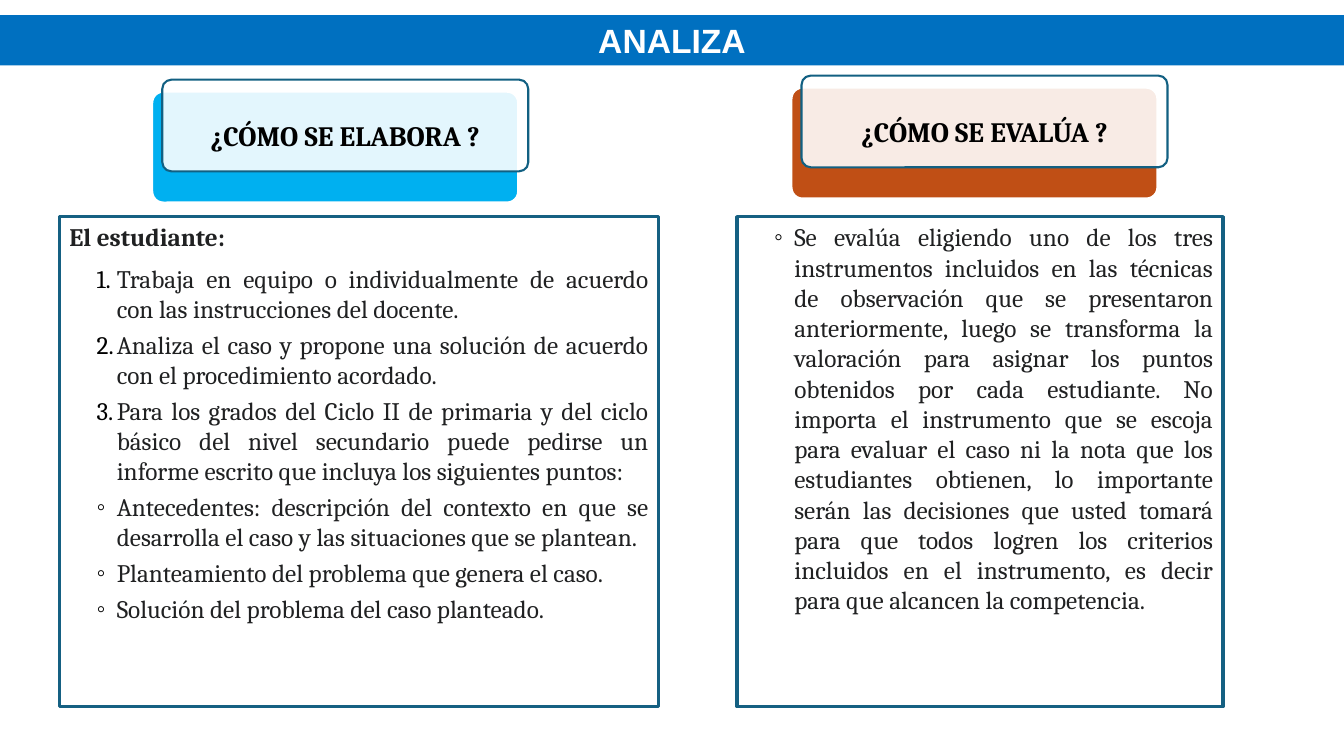
"""Builds the ANALIZA slide: how a case study is prepared and how it is assessed."""
from pptx import Presentation
from pptx.dml.color import RGBColor
from pptx.enum.shapes import MSO_SHAPE
from pptx.enum.text import MSO_ANCHOR, PP_ALIGN
from pptx.oxml.ns import qn
from pptx.util import Inches, Pt
from lxml import etree

RECT, ROUNDED = MSO_SHAPE.RECTANGLE, MSO_SHAPE.ROUNDED_RECTANGLE
LEFT, CENTER, JUSTIFY = PP_ALIGN.LEFT, PP_ALIGN.CENTER, PP_ALIGN.JUSTIFY
TOP, MIDDLE = MSO_ANCHOR.TOP, MSO_ANCHOR.MIDDLE

TITLE = "ANALIZA"
SECTIONS = [
    {
        "heading": "¿CÓMO SE ELABORA ?",
        "card": (1.51, 0.91),
        "card_color": "00B0F0",
        "panel": (0.59, 2.15, 5.94, 4.86),
        "border": 2,
        "body": [
            ("intro", "El estudiante:"),
            ("number", "Trabaja en equipo o individualmente de acuerdo con las "
                       "instrucciones del docente."),
            ("number", "Analiza el caso y propone una solución de acuerdo con el "
                       "procedimiento acordado."),
            ("number", "Para los grados del Ciclo II de primaria y del ciclo básico del "
                       "nivel secundario puede pedirse un informe escrito que incluya "
                       "los siguientes puntos:"),
            ("bullet", "Antecedentes: descripción del contexto en que se desarrolla el "
                       "caso y las situaciones que se plantean."),
            ("bullet", "Planteamiento del problema que genera el caso."),
            ("bullet", "Solución del problema del caso planteado."),
        ],
    },
    {
        "heading": "¿CÓMO SE EVALÚA ?",
        "card": (7.85, 0.87),
        "card_color": "C04F15",
        "panel": (7.31, 2.15, 4.82, 4.86),
        "border": 2.25,
        "body": [
            ("bullet", "Se evalúa eligiendo uno de los tres instrumentos incluidos en "
                       "las técnicas de observación que se presentaron anteriormente, "
                       "luego se transforma la valoración para asignar los puntos "
                       "obtenidos por cada estudiante. No importa el instrumento que se "
                       "escoja para evaluar el caso ni la nota que los estudiantes "
                       "obtienen, lo importante serán las decisiones que usted tomará "
                       "para que todos logren los criterios incluidos en el "
                       "instrumento, es decir para que alcancen la competencia."),
        ],
    },
]

THEME = {
    "banner": "0070C0", "white": "FFFFFF", "black": "000000", "ink": "202122",
    "panel_line": "156082", "card_line": "126082",
    "title_font": "Arial", "text_font": "Cambria",
    "title_size": 24, "heading_size": 20, "body_size": 18,
}
CARD_WIDTH, BASE_HEIGHT, FACE_HEIGHT = 3.63, 1.1, 0.91
FACE_SHIFT = (0.1, -0.12)
LABEL_SHIFT, LABEL_WIDTH = 0.22, 3.39


def add_box(shapes, kind, box, fill=None, line=None, width=1.5, opacity=None):
    shape = shapes.add_shape(kind, *map(Inches, box))
    shape.shadow.inherit = False
    if kind == ROUNDED:
        shape.adjustments[0] = 0.1
    if fill:
        shape.fill.solid()
        shape.fill.fore_color.rgb = RGBColor.from_string(fill)
    else:
        shape.fill.background()
    if opacity:
        color = shape._element.spPr.find(qn("a:solidFill"))[0]
        etree.SubElement(color, qn("a:alpha"), val=str(opacity * 1000))
    if line:
        shape.line.color.rgb = RGBColor.from_string(line)
        shape.line.width = Pt(width)
    else:
        shape.line.fill.background()
    return shape


def prepare_frame(shape, anchor=TOP, inset=(0.1, 0.05)):
    frame = shape.text_frame
    frame.word_wrap = True
    frame.vertical_anchor = anchor
    frame.margin_left = frame.margin_right = Inches(inset[0])
    frame.margin_top = frame.margin_bottom = Inches(inset[1])
    return frame


def write(paragraph, text, font=THEME["text_font"], size=THEME["body_size"],
          color=THEME["ink"], bold=False, align=LEFT, before=0, after=0, spacing=None):
    paragraph.alignment = align
    paragraph.space_before, paragraph.space_after = Pt(before), Pt(after)
    if spacing:
        paragraph.line_spacing = spacing
    run = paragraph.add_run()
    run.text = text
    run.font.name, run.font.size, run.font.bold = font, Pt(size), bold
    run.font.color.rgb = RGBColor.from_string(color)


def add_marker(paragraph, role):
    if role == "bullet":
        paragraph.level = 1
    properties = paragraph._p.get_or_add_pPr()
    properties.set("marL", str(Inches(0.47)))
    properties.set("indent", str(Inches(-0.2)))
    marker_color = etree.SubElement(properties, qn("a:buClr"))
    etree.SubElement(marker_color, qn("a:srgbClr"), val=THEME["black"])
    etree.SubElement(properties, qn("a:buFont"), typeface=THEME["title_font"])
    if role == "number":
        etree.SubElement(properties, qn("a:buAutoNum"), type="arabicPeriod")
    else:
        etree.SubElement(properties, qn("a:buChar"), char="◦")


def add_panel(slide, section):
    panel = add_box(slide.shapes, RECT, section["panel"],
                    line=THEME["panel_line"], width=section["border"])
    frame = prepare_frame(panel)
    for index, (role, text) in enumerate(section["body"]):
        paragraph = frame.add_paragraph() if index else frame.paragraphs[0]
        if role == "intro":
            write(paragraph, text, bold=True, before=5, after=5)
        else:
            write(paragraph, text, align=JUSTIFY, before=3, after=1)
            add_marker(paragraph, role)


def add_card(slide, section):
    x, y = section["card"]
    shapes = slide.shapes.add_group_shape().shapes
    add_box(shapes, ROUNDED, (x, y, CARD_WIDTH, BASE_HEIGHT),
            fill=section["card_color"], line=THEME["white"])
    add_box(shapes, ROUNDED, (x + FACE_SHIFT[0], y + FACE_SHIFT[1], CARD_WIDTH, FACE_HEIGHT),
            fill=THEME["white"], line=THEME["card_line"], opacity=89)
    label_box = (x + LABEL_SHIFT, y, LABEL_WIDTH, FACE_HEIGHT)
    label = shapes.add_textbox(*map(Inches, label_box))
    frame = prepare_frame(label, MIDDLE, (0.11, 0.11))
    write(frame.paragraphs[0], section["heading"], size=THEME["heading_size"],
          color=THEME["black"], bold=True, align=CENTER, spacing=0.9)


def main():
    deck = Presentation()
    deck.slide_width, deck.slide_height = Inches(13.33), Inches(7.5)
    slide = deck.slides.add_slide(deck.slide_layouts[6])
    banner = add_box(slide.shapes, RECT, (0, 0.15, 13.33, 0.5), fill=THEME["banner"])
    write(prepare_frame(banner).paragraphs[0], TITLE, font=THEME["title_font"],
          size=THEME["title_size"], color=THEME["white"], bold=True, align=CENTER)
    for section in SECTIONS:
        add_panel(slide, section)
        add_card(slide, section)
    deck.save("out.pptx")


if __name__ == "__main__":
    main()
